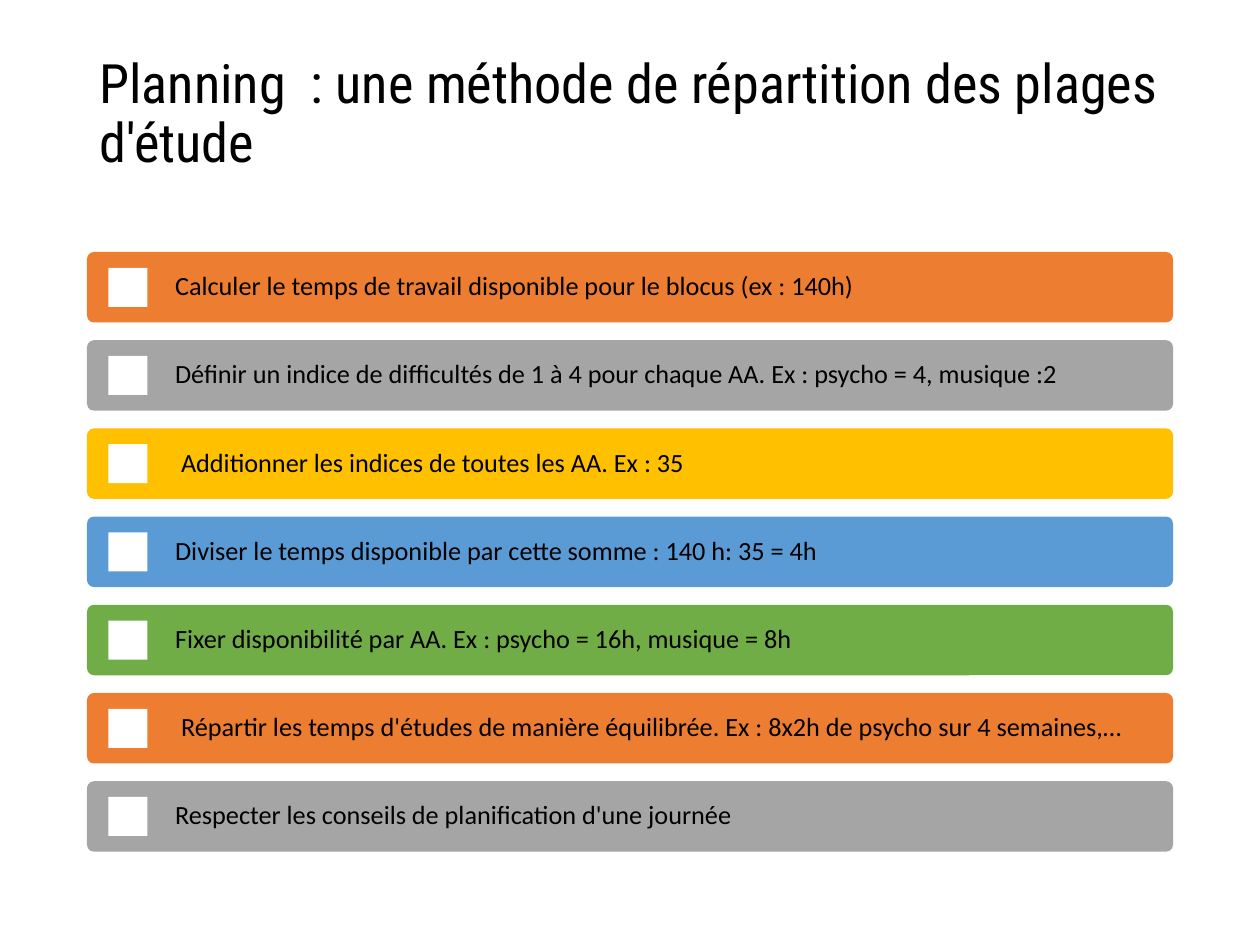
"""Build a slide listing the steps for sharing out study time."""
import pptx
import pptx.dml.color
import pptx.enum.shapes
import pptx.enum.text
import pptx.util

WIDTH, HEIGHT = 10, 7.5
LEFT, SPAN = 0.69, 8.62
FIRST_ROW, ROW_STEP, ROW_HEIGHT = 2, 0.7, 0.56
MARK_LEFT, MARK_SIZE = 0.86, 0.31
TEXT_LEFT = 1.33
TITLE = "Planning  : une méthode de répartition des plages d'étude"
COLOURS = ["ED7D31", "A5A5A5", "FFC000", "5B9BD5", "70AD47"]
STEPS = [
    "Calculer le temps de travail disponible pour le blocus (ex : 140h)",
    "Définir un indice de difficultés de 1 à 4 pour chaque AA. Ex : psycho = 4, musique :2",
    " Additionner les indices de toutes les AA. Ex : 35",
    "Diviser le temps disponible par cette somme : 140 h: 35 = 4h",
    "Fixer disponibilité par AA. Ex : psycho = 16h, musique = 8h",
    " Répartir les temps d'études de manière équilibrée. Ex : 8x2h de psycho sur 4 semaines,…",
    "Respecter les conseils de planification d'une journée ",
]


def paint(colour_format, value):
    """Set a colour from a hex string."""
    colour_format.rgb = pptx.dml.color.RGBColor.from_string(value)


def inches(*lengths):
    """Convert lengths in inches to slide units."""
    return [pptx.util.Inches(length) for length in lengths]


def add_block(shapes, kind, area, colour):
    """Add a filled shape without outline or shadow."""
    block = shapes.add_shape(kind, *inches(*area))
    block.shadow.inherit = False
    block.fill.solid()
    paint(block.fill.fore_color, colour)
    block.line.fill.background()
    return block


def add_text(shapes, area, text, font, size, anchor):
    """Add a wrapped text box with one black paragraph."""
    box = shapes.add_textbox(*inches(*area))
    frame = box.text_frame
    frame.word_wrap = True
    frame.vertical_anchor = anchor
    frame.text = text
    para = frame.paragraphs[0]
    para.line_spacing = 0.9
    for span in para.runs:
        span.font.name = font
        span.font.size = pptx.util.Pt(size)
        paint(span.font.color, "000000")
    return box


def add_step(shapes, row, text):
    """Add one coloured bar with its white mark and its wording."""
    top = FIRST_ROW + row * ROW_STEP
    kinds = pptx.enum.shapes.MSO_SHAPE
    bar = add_block(shapes, kinds.ROUNDED_RECTANGLE, (LEFT, top, SPAN, ROW_HEIGHT),
                    COLOURS[row % len(COLOURS)])
    bar.adjustments[0] = 0.1
    mark_top = top + (ROW_HEIGHT - MARK_SIZE) / 2
    add_block(shapes, kinds.RECTANGLE, (MARK_LEFT, mark_top, MARK_SIZE, MARK_SIZE), "FFFFFF")
    area = (TEXT_LEFT, top, LEFT + SPAN - TEXT_LEFT, ROW_HEIGHT)
    box = add_text(shapes, area, text, "Calibri", 15, pptx.enum.text.MSO_ANCHOR.MIDDLE)
    frame = box.text_frame
    frame.margin_left = frame.margin_right = pptx.util.Inches(0.06)
    frame.margin_top = frame.margin_bottom = pptx.util.Inches(0.06)


def main():
    """Build and save the deck."""
    deck = pptx.Presentation()
    deck.slide_width, deck.slide_height = inches(WIDTH, HEIGHT)
    page = deck.slides.add_slide(deck.slide_layouts[6])
    add_text(page.shapes, (LEFT, 0.4, SPAN, 1.45), TITLE, "Roboto Condensed", 31,
             pptx.enum.text.MSO_ANCHOR.TOP)
    steps = page.shapes.add_group_shape()
    for row, text in enumerate(STEPS):
        add_step(steps.shapes, row, text)
    deck.save("out.pptx")


if __name__ == "__main__":
    main()
